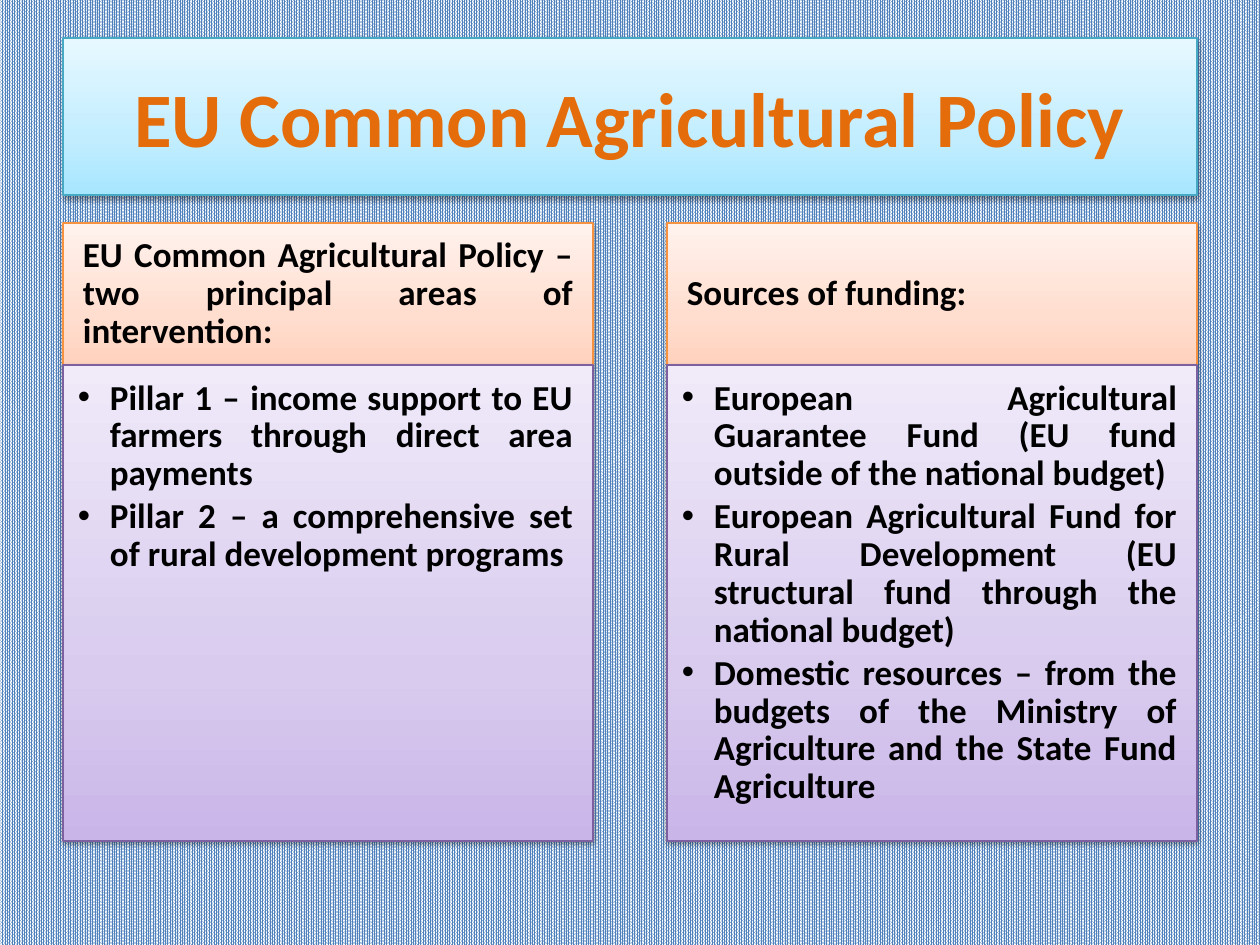
from lxml import etree
from pptx import Presentation
from pptx import util as u
from pptx.dml.color import RGBColor
from pptx.enum import dml, shapes, text
from pptx.oxml.ns import qn

# Content
TITLE = "EU Common Agricultural Policy"
COLUMNS = [
    ("EU Common Agricultural Policy – two principal areas of intervention:", [
        "Pillar 1 – income support to EU farmers through direct area payments",
        "Pillar 2 – a comprehensive set of rural development programs",
    ]),
    ("Sources of funding:", [
        "European Agricultural Guarantee Fund (EU fund outside of the national budget)",
        "European Agricultural Fund for Rural Development "
        "(EU structural fund through the national budget)",
        "Domestic resources – from the budgets of the Ministry of Agriculture "
        "and the State Fund Agriculture",
    ]),
]

# Look
COLORS = {"pattern": "4F81BD", "paper": "FFFFFF", "title": "E46C0A", "text": "000000"}
PANELS = {  # gradient from bottom to top, then outline
    "title": (("A7E6FF", "C1EDFF", "E7F8FF"), "46AAC5"),
    "heading": (("FFD2BD", "FFDED0", "FFF2ED"), "F69240"),
    "body": (("C9B5E8", "D8CBEE", "F0EAF9"), "7D60A0"),
}
STOPS = (0, 35, 100)
HEADING_FRAME = {"margin_left": 20, "margin_top": 11, "margin_right": 20, "margin_bottom": 11}
BODY_FRAME = {"margin_left": 15, "margin_top": 15, "margin_right": 20, "margin_bottom": 21}

# Layout in px
LEFT, WIDTH, GAP = 63, 1134, 74
TITLE_TOP, TITLE_H = 38, 157
HEADING_TOP, HEADING_H, BODY_H = 223, 142, 476
INDENT = 32
COLUMN_W = (WIDTH - GAP) // 2


def px(n):
    return u.Emu(round(n * 914400 / 126))


def rgb(value):
    return RGBColor.from_string(value)


def add_color(parent, value):
    return etree.SubElement(parent, qn("a:srgbClr"), val=value)


def style_panel(sp, kind):
    """Gradient fill, thin outline and soft shadow below."""
    colors, outline = PANELS[kind]
    sp.fill.gradient()
    sp.fill.gradient_angle = 90
    stops = sp._element.spPr.find(".//" + qn("a:gsLst"))
    for old in list(stops):
        stops.remove(old)
    for pos, color in zip(STOPS, colors):
        add_color(etree.SubElement(stops, qn("a:gs"), pos=str(pos * 1000)), color)
    sp.line.color.rgb = rgb(outline)
    sp.line.width = u.Pt(0.75)
    sp.shadow.inherit = False
    shadow = etree.SubElement(
        sp._element.spPr.find(qn("a:effectLst")), qn("a:outerShdw"),
        blurRad="40000", dist="20000", dir="5400000", rotWithShape="0")
    etree.SubElement(add_color(shadow, "000000"), qn("a:alpha"), val="38000")


def write(p, words, size, color):
    r = p.add_run()
    r.text = words
    for name, value in {"name": "Calibri", "size": u.Pt(size), "bold": True}.items():
        setattr(r.font, name, value)
    r.font.color.rgb = rgb(color)


def add_bullet(p):
    pPr = p._p.get_or_add_pPr()
    pPr.set("marL", str(px(INDENT)))
    pPr.set("indent", str(-px(INDENT)))
    etree.SubElement(pPr, qn("a:buFont"), typeface="Arial")
    etree.SubElement(pPr, qn("a:buChar"), char="•")


def add_panel(s, kind, box, lines, frame, anchor, after, bullets=False):
    sp = s.shapes.add_shape(shapes.MSO_SHAPE.RECTANGLE, *map(px, box))
    style_panel(sp, kind)
    tf = sp.text_frame
    tf.word_wrap = True
    tf.vertical_anchor = anchor
    for name, value in frame.items():
        setattr(tf, name, px(value))
    for i, line in enumerate(lines):
        p = tf.add_paragraph() if i else tf.paragraphs[0]
        for name, value in {"alignment": text.PP_ALIGN.JUSTIFY, "line_spacing": 0.9,
                            "space_after": u.Pt(after)}.items():
            setattr(p, name, value)
        if bullets:
            add_bullet(p)
        write(p, line, 20, COLORS["text"])


prs = Presentation()
prs.slide_width, prs.slide_height = u.Inches(10), u.Inches(7.5)
s = prs.slides.add_slide(prs.slide_layouts[5])

# Woven background
back = s.background.fill
back.patterned()
back.pattern = dml.MSO_PATTERN.PERCENT_90
back.fore_color.rgb = rgb(COLORS["pattern"])
back.back_color.rgb = rgb(COLORS["paper"])

# Title
title = s.shapes.title
title.left, title.top, title.width, title.height = map(px, (LEFT, TITLE_TOP, WIDTH, TITLE_H))
style_panel(title, "title")
title.text_frame.vertical_anchor = text.MSO_ANCHOR.MIDDLE
title.text_frame.paragraphs[0].alignment = text.PP_ALIGN.CENTER
write(title.text_frame.paragraphs[0], TITLE, 44, COLORS["title"])

# Columns: heading above its list
for i, (heading, items) in enumerate(COLUMNS):
    x = LEFT + i * (COLUMN_W + GAP)
    add_panel(s, "heading", (x, HEADING_TOP, COLUMN_W, HEADING_H), [heading],
              HEADING_FRAME, text.MSO_ANCHOR.MIDDLE, after=7)
    add_panel(s, "body", (x, HEADING_TOP + HEADING_H, COLUMN_W, BODY_H), items,
              BODY_FRAME, text.MSO_ANCHOR.TOP, after=3, bullets=True)

prs.save("out.pptx")
